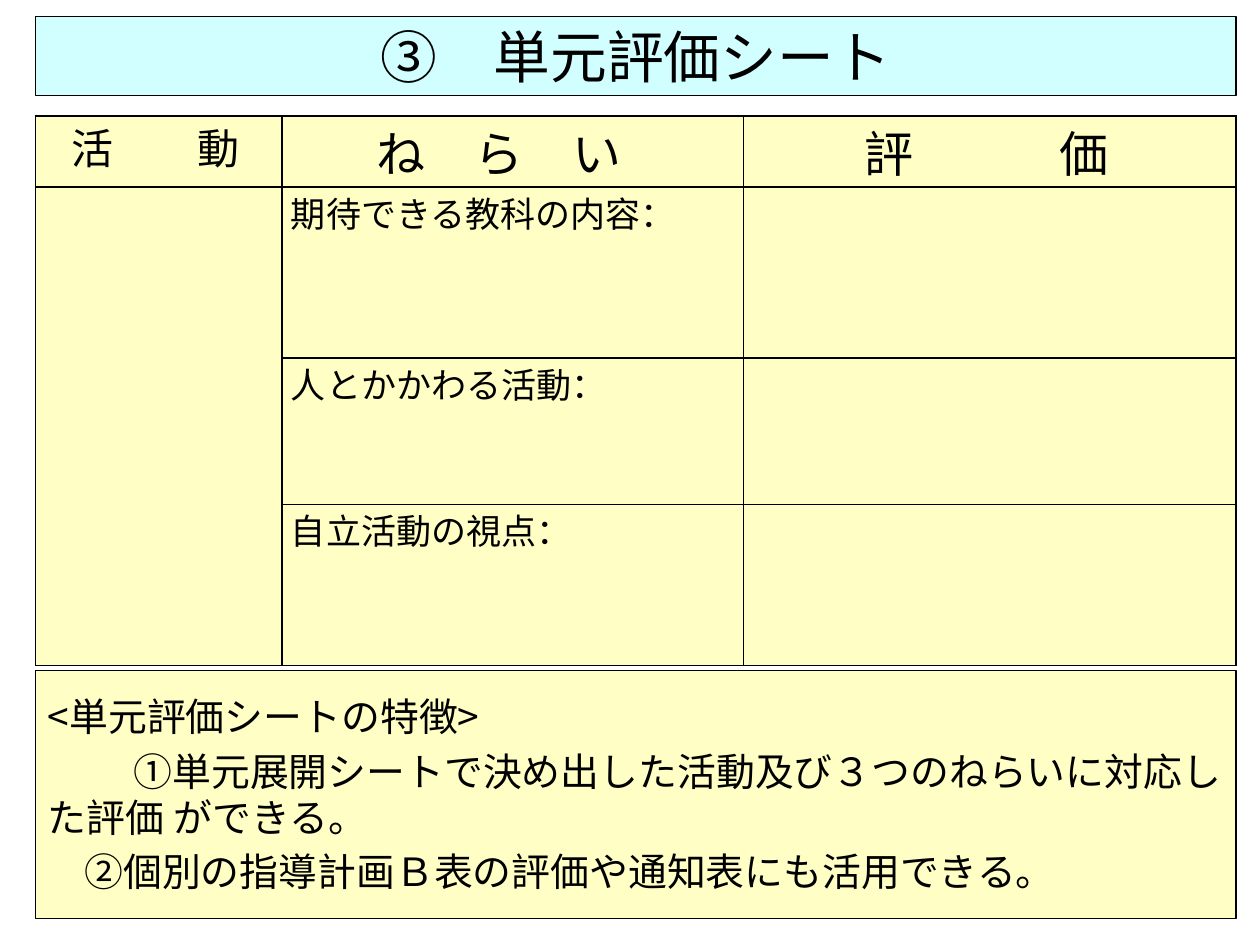
from dataclasses import dataclass

from lxml.etree import SubElement
from pptx import Presentation
from pptx.dml.color import RGBColor
from pptx.enum.text import MSO_ANCHOR, MSO_AUTO_SIZE, PP_ALIGN
from pptx.oxml.ns import qn
from pptx.util import Inches, Pt

BLACK, CREAM, AQUA = "000000", "FFFFC5", "D1FEFF"
JAPANESE_FONT = "Noto Sans CJK JP"
LEFT, WIDTH = 0.28, 9.53
COLUMN_WIDTHS = [1.96, 3.66, 3.91]
ROW_HEIGHTS = [0.56, 1.36, 1.16, 1.28]


@dataclass
class Heading:
    text: str
    size: float
    indent: float


@dataclass
class Feature:
    text: str
    indent: float = 0
    space_before: float = 5
    tab: float = 0


HEADINGS = [
    Heading("活　　動", 24, 0.22),
    Heading("ね　ら　い", 28, 0.68),
    Heading("評　　　価", 28, 0.89),
]
AIMS = ["期待できる教科の内容：", "人とかかわる活動：", "自立活動の視点："]
FEATURES = [
    Feature("<単元評価シートの特徴>", space_before=0),
    Feature("①単元展開シートで決め出した活動及び３つのねらいに対応した評価\tができる。",
            indent=0.68, tab=1.59),
    Feature("②個別の指導計画Ｂ表の評価や通知表にも活用できる。", indent=0.29),
]


def color(value: str) -> RGBColor:
    return RGBColor.from_string(value)


def format_runs(paragraph, size: float, font: str) -> None:
    for run in paragraph.runs:
        run.font.size = Pt(size)
        run.font.name = font
        run.font.bold = False
        run.font.color.rgb = color(BLACK)
        SubElement(run.font._element, qn("a:ea"), typeface=JAPANESE_FONT)


def indent_first_line(paragraph, indent: float) -> None:
    properties = paragraph._p.get_or_add_pPr()
    properties.set("marL", "0")
    properties.set("indent", str(Inches(indent)))


def style_box(shape, top: float, height: float, fill: str) -> None:
    shape.left, shape.top = Inches(LEFT), Inches(top)
    shape.width, shape.height = Inches(WIDTH), Inches(height)
    shape.fill.solid()
    shape.fill.fore_color.rgb = color(fill)
    shape.line.color.rgb = color(BLACK)
    shape.line.width = Pt(0.75)
    shape.text_frame.word_wrap = True
    shape.text_frame.auto_size = MSO_AUTO_SIZE.NONE


def style_cell(cell) -> None:
    """Fill the cell and rule all four of its sides."""
    cell.margin_left = cell.margin_right = Inches(0.07)
    cell.margin_top = cell.margin_bottom = 0
    cell.fill.solid()
    cell.fill.fore_color.rgb = color(CREAM)
    properties = cell._tc.get_or_add_tcPr()
    for position, side in enumerate(("lnL", "lnR", "lnT", "lnB")):
        border = SubElement(properties, qn(f"a:{side}"), w=str(Pt(1)))
        fill = SubElement(border, qn("a:solidFill"))
        SubElement(fill, qn("a:srgbClr"), val=BLACK)
        properties.insert(position, border)


def add_evaluation_table(slide) -> None:
    frame = slide.shapes.add_table(
        len(ROW_HEIGHTS), len(COLUMN_WIDTHS), Inches(LEFT), Inches(0.92),
        Inches(WIDTH), Inches(sum(ROW_HEIGHTS)))
    table = frame.table
    table.first_row = table.horz_banding = False
    for column, width in zip(table.columns, COLUMN_WIDTHS):
        column.width = Inches(width)
    for row, height in zip(table.rows, ROW_HEIGHTS):
        row.height = Inches(height)
    for cell in table.iter_cells():
        style_cell(cell)
    table.cell(1, 0).merge(table.cell(3, 0))

    for index, heading in enumerate(HEADINGS):
        paragraph = table.cell(0, index).text_frame.paragraphs[0]
        paragraph.text = heading.text
        indent_first_line(paragraph, heading.indent)
        format_runs(paragraph, heading.size, "Cambria")
    for index, aim in enumerate(AIMS, start=1):
        paragraph = table.cell(index, 1).text_frame.paragraphs[0]
        paragraph.text = aim
        paragraph.alignment = PP_ALIGN.JUSTIFY
        format_runs(paragraph, 20, "Cambria")


def fill_title(title) -> None:
    style_box(title, 0.13, 0.63, AQUA)
    title.text_frame.text = "③　単元評価シート"
    title.text_frame.vertical_anchor = MSO_ANCHOR.MIDDLE
    paragraph = title.text_frame.paragraphs[0]
    paragraph.alignment = PP_ALIGN.CENTER
    format_runs(paragraph, 32.4, "Calibri")


def fill_features(body) -> None:
    style_box(body, 5.32, 1.97, CREAM)
    text_frame = body.text_frame
    text_frame.vertical_anchor = MSO_ANCHOR.TOP
    text_frame.margin_top = Inches(0.18)
    text_frame.text = "\n".join(feature.text for feature in FEATURES)
    for paragraph, feature in zip(text_frame.paragraphs, FEATURES):
        paragraph.line_spacing = Pt(26.3)
        paragraph.space_before = Pt(feature.space_before)
        indent_first_line(paragraph, feature.indent)
        properties = paragraph._p.get_or_add_pPr()
        SubElement(properties, qn("a:buNone"))
        if feature.tab:
            tabs = SubElement(properties, qn("a:tabLst"))
            SubElement(tabs, qn("a:tab"), pos=str(Inches(feature.tab)), algn="l")
        format_runs(paragraph, 22.2, JAPANESE_FONT)


def main() -> None:
    presentation = Presentation()
    presentation.slide_width, presentation.slide_height = Inches(10), Inches(7.5)
    slide = presentation.slides.add_slide(presentation.slide_layouts[1])
    fill_title(slide.shapes.title)
    add_evaluation_table(slide)
    fill_features(slide.placeholders[1])
    presentation.save("out.pptx")


if __name__ == "__main__":
    main()
